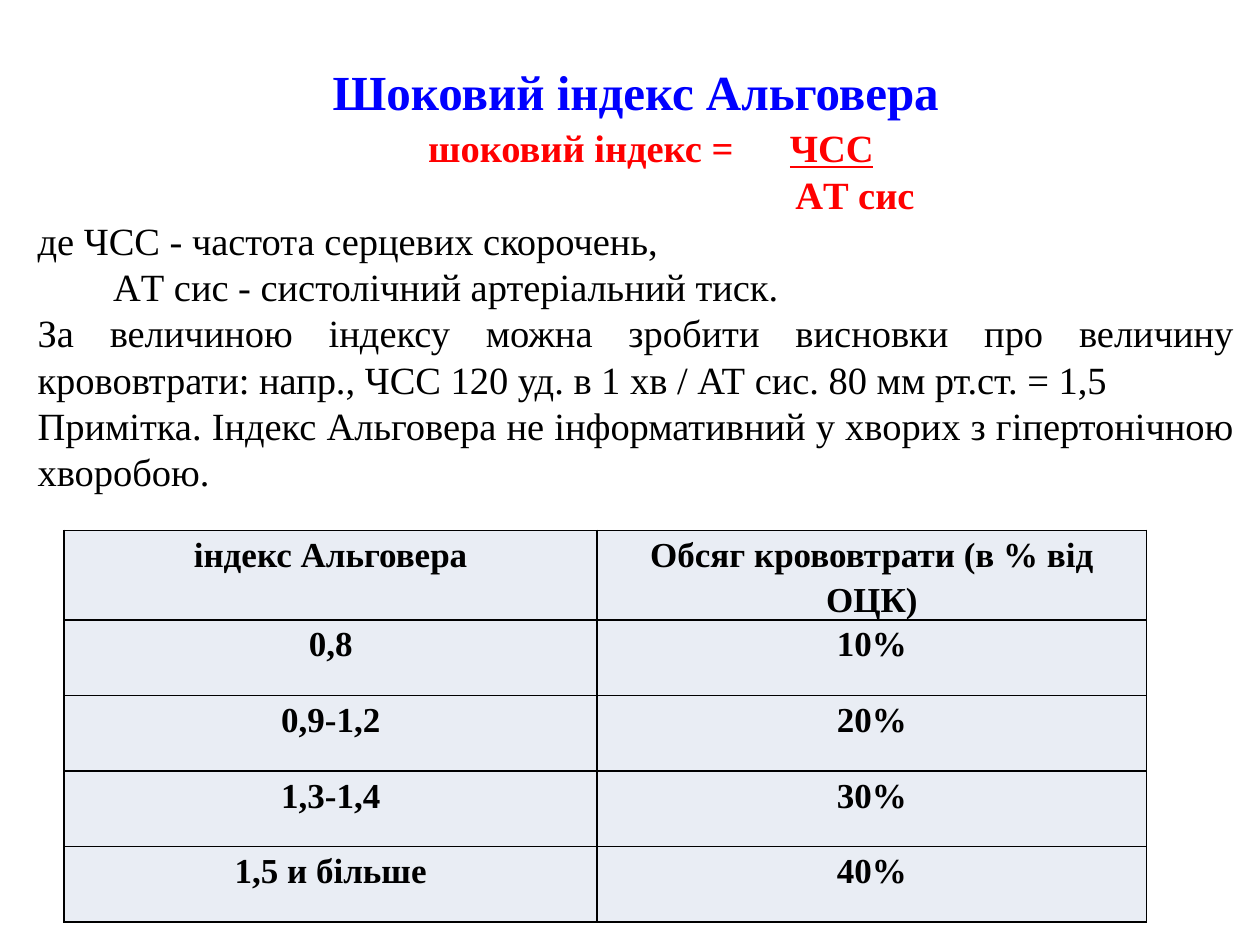
from lxml import etree
from pptx import Presentation
from pptx import util as u
from pptx.dml.color import RGBColor
from pptx.enum import text
from pptx.oxml import ns

Inches = u.Inches
FONT = "Times New Roman"
COLORS = {"title": "0000FF", "formula": "FF0000", "body": "000000", "cell": "E9EDF4", "border": "000000"}
BODY = [
    ("де ЧСС - частота серцевих скорочень,", 0),
    ("AТ сис - систолічний артеріальний тиск.", 0.6),
    ("За величиною індексу можна зробити висновки про величину крововтрати: "
     "напр., ЧСС 120 уд. в 1 хв / АТ сис. 80 мм рт.ст. = 1,5", 0),
    ("Примітка. Індекс Альговера не інформативний у хворих з гіпертонічною хворобою.", 0),
]
ROWS = [
    ("індекс Альговера", "Обсяг крововтрати (в % від ОЦК)"),
    ("0,8", "10%"),
    ("0,9-1,2", "20%"),
    ("1,3-1,4", "30%"),
    ("1,5 и більше", "40%"),
]


def add_span(para, words, size, color, bold=False, underline=None):
    """Append one formatted run to a paragraph."""
    span = para.add_run()
    span.text = words
    font = span.font
    font.name, font.size, font.bold, font.underline = FONT, u.Pt(size), bold, underline
    font.color.rgb = RGBColor.from_string(COLORS[color])


def add_para(frame, align, indent=0):
    """Start a paragraph with the given alignment and left indent in inches."""
    para = frame.paragraphs[0] if not frame.paragraphs[0].runs else frame.add_paragraph()
    para.alignment = align
    if indent:
        para._p.get_or_add_pPr().set("marL", str(Inches(indent)))
    return para


def set_tabs(para, stops):
    """Give a paragraph left tab stops at the given inches."""
    tabs = etree.SubElement(para._p.get_or_add_pPr(), ns.qn("a:tabLst"))
    for stop in stops:
        etree.SubElement(tabs, ns.qn("a:tab"), pos=str(Inches(stop)), algn="l")


def add_explanation(page, left, top, width, height):
    """Place the title, the index formula and its explanation."""
    align = text.PP_ALIGN
    box = page.shapes.add_textbox(Inches(left), Inches(top), Inches(width), Inches(height))
    frame = box.text_frame
    frame.word_wrap = True
    frame.auto_size = text.MSO_AUTO_SIZE.SHAPE_TO_FIT_TEXT
    frame.vertical_anchor = text.MSO_ANCHOR.MIDDLE

    add_span(add_para(frame, align.CENTER), "Шоковий індекс Альговера", 28, "title", True)
    formula = add_para(frame, align.LEFT)
    set_tabs(formula, (3.1, 5.97))
    add_span(formula, "\t", 24, "formula", True)
    add_span(formula, "шоковий індекс =\t", 22, "formula", True)
    add_span(formula, "ЧСС", 22, "formula", True, True)
    add_span(add_para(frame, align.CENTER, 3.48), "AТ сис", 22, "formula", True)
    for words, indent in BODY:
        add_span(add_para(frame, align.JUSTIFY, indent), words, 22, "body")


def add_borders(cell):
    """Draw a thin line on each side of a table cell."""
    props = cell._tc.get_or_add_tcPr()
    for side in ("lnL", "lnR", "lnT", "lnB"):
        line = etree.SubElement(props, ns.qn(f"a:{side}"), w=str(u.Pt(1)))
        fill = etree.SubElement(line, ns.qn("a:solidFill"))
        etree.SubElement(fill, ns.qn("a:srgbClr"), val=COLORS["border"])


def add_loss_table(page, left, top, widths, row_height):
    """Place the table of blood loss by index value."""
    table = page.shapes.add_table(
        len(ROWS), len(widths), Inches(left), Inches(top),
        Inches(sum(widths)), Inches(row_height * len(ROWS))).table
    table.first_row = table.horz_banding = False
    for column, width in zip(table.columns, widths):
        column.width = Inches(width)
    for row, values in zip(table.rows, ROWS):
        row.height = Inches(row_height)
        for cell, words in zip(row.cells, values):
            cell.margin_left = cell.margin_right = Inches(0.03)
            cell.margin_top = cell.margin_bottom = 0
            add_borders(cell)
            cell.fill.solid()
            cell.fill.fore_color.rgb = RGBColor.from_string(COLORS["cell"])
            para = add_para(cell.text_frame, text.PP_ALIGN.CENTER)
            para.line_spacing = 1.15
            add_span(para, words, 20, "body", True)


def main():
    """Build the slide and save the deck."""
    deck = Presentation()
    deck.slide_width, deck.slide_height = Inches(10), Inches(7.5)
    page = deck.slides.add_slide(deck.slide_layouts[6])
    add_loss_table(page, 0.51, 4.21, (4.23, 4.36), 0.6)
    add_explanation(page, 0.2, 0.42, 9.69, 3.57)
    deck.save("out.pptx")


if __name__ == "__main__":
    main()
